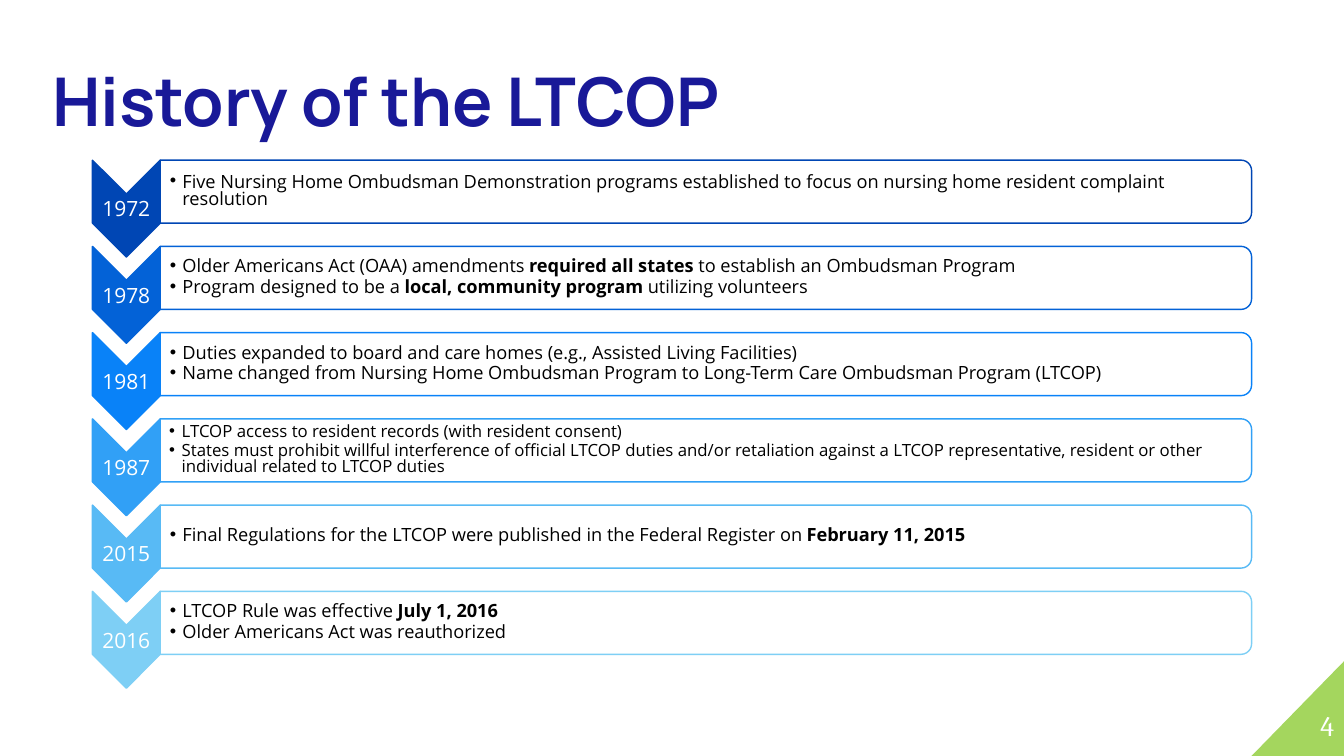
from lxml.etree import SubElement
from pptx import Presentation
from pptx.dml.color import RGBColor
from pptx.enum.shapes import MSO_SHAPE as Preset
from pptx.enum.text import MSO_ANCHOR as Anchor, MSO_AUTO_SIZE as AutoSize, PP_ALIGN as Align
from pptx.oxml.ns import qn
from pptx.util import Pt

COLORS = {
    "white": "FFFFFF", "black": "000000", "title": "191998", "corner": "A4D65E",
    "1972": "0046B4", "1978": "0362D7", "1981": "0982F8",
    "1987": "31A0F6", "2015": "58BAF5", "2016": "7ECFF5",
}
SLIDE_WIDTH, SLIDE_HEIGHT = 960, 540

# year, text size, bullets; every second run of a bullet is bold
MILESTONES = [
    ("1972", 13, [["Five Nursing Home Ombudsman Demonstration programs established to focus on "
                   "nursing home resident complaint resolution"]]),
    ("1978", 13, [["Older Americans Act (OAA) amendments ", "required all states ",
                   "to establish an Ombudsman Program"],
                  ["Program designed to be a ", "local, community program ",
                   "utilizing volunteers"]]),
    ("1981", 13, [["Duties expanded to board and care homes (e.g., Assisted Living Facilities)"],
                  ["Name changed from Nursing Home Ombudsman Program to Long-Term Care "
                   "Ombudsman Program (LTCOP)"]]),
    ("1987", 12, [["LTCOP access to resident records (with resident consent)"],
                  ["States must prohibit willful interference of official LTCOP duties and/or "
                   "retaliation against a LTCOP representative, resident or other individual "
                   "related to LTCOP duties"]]),
    ("2015", 13, [["Final Regulations for the LTCOP were published in the Federal Register on ",
                   "February 11, 2015"]]),
    ("2016", 13, [["LTCOP Rule was effective ", "July 1, 2016"],
                  ["Older Americans Act was reauthorized"]]),
]


def color(name):
    return RGBColor.from_string(COLORS[name])


def add_run(paragraph, text, size, font_name, color_name, bold=False):
    run = paragraph.add_run()
    run.text = text
    run.font.size = Pt(size)
    run.font.name = font_name
    run.font.bold = bold
    run.font.color.rgb = color(color_name)


def add_preset(slide, preset, left, top, width, height, fill, line=None):
    shape = slide.shapes.add_shape(preset, Pt(left), Pt(top), Pt(width), Pt(height))
    shape.shadow.inherit = False
    shape.fill.solid()
    shape.fill.fore_color.rgb = color(fill)
    if line:
        shape.line.color.rgb = color(line)
        shape.line.width = Pt(1)
    else:
        shape.line.fill.background()
    return shape


def add_turned(slide, preset, left, top, width, height, fill, line):
    """Add a shape turned by 90 degrees that covers the given box once turned."""
    shift = (width - height) / 2
    shape = add_preset(slide, preset, left + shift, top - shift, height, width, fill, line)
    shape.rotation = 90


def add_text_frame(slide, left, top, width, height, left_inset=0.75, inset=0.75):
    text_box = slide.shapes.add_textbox(Pt(left), Pt(top), Pt(width), Pt(height))
    frame = text_box.text_frame
    frame.word_wrap = True
    frame.vertical_anchor = Anchor.MIDDLE
    frame.margin_left = Pt(left_inset)
    frame.margin_top = frame.margin_right = frame.margin_bottom = Pt(inset)
    return frame


def make_bullet(paragraph, indent):
    properties = paragraph._p.get_or_add_pPr()
    properties.set("marL", str(Pt(indent)))
    properties.set("indent", str(-Pt(indent)))
    SubElement(properties, qn("a:buFont")).set("typeface", "Arial")
    SubElement(properties, qn("a:buChar")).set("char", "•")


def add_title(slide, left, top, width, height):
    title = slide.shapes.title
    title.left, title.top, title.width, title.height = Pt(left), Pt(top), Pt(width), Pt(height)
    frame = title.text_frame
    frame.auto_size = AutoSize.NONE
    frame.vertical_anchor = Anchor.MIDDLE
    paragraph = frame.paragraphs[0]
    paragraph.alignment = Align.LEFT
    paragraph.line_spacing = 0.9
    add_run(paragraph, "History of the LTCOP", 48, "Manrope", "title", bold=True)


def add_milestone(slide, left, top, width, height, year, size, bullets):
    """Add a year chevron, which hangs below the row, and its panel of bullets."""
    chevron_width, chevron_height = 48.4, 69.2
    add_turned(slide, Preset.CHEVRON, left, top, chevron_width, chevron_height, year, year)
    label = add_text_frame(slide, left, top, chevron_width, chevron_height).paragraphs[0]
    label.alignment = Align.CENTER
    add_run(label, year, 15, "Open Sans", "white")

    panel = (left + chevron_width, top, width - chevron_width, height)
    add_turned(slide, Preset.ROUND_2_SAME_RECTANGLE, *panel, "white", year)
    frame = add_text_frame(slide, *panel, left_inset=size * 0.53)
    for index, runs in enumerate(bullets):
        paragraph = frame.add_paragraph() if index else frame.paragraphs[0]
        make_bullet(paragraph, 9)
        paragraph.line_spacing = 0.8
        paragraph.space_after = Pt(2)
        for position, text in enumerate(runs):
            add_run(paragraph, text, size, "Open Sans", "black", bold=position % 2 == 1)


def add_timeline(slide, left, top, width, pitch):
    for row, milestone in enumerate(MILESTONES):
        add_milestone(slide, left, top + row * pitch, width, 45, *milestone)


def add_page_corner(slide, width, height):
    left, top = SLIDE_WIDTH - width, SLIDE_HEIGHT - height
    triangle = add_preset(slide, Preset.RIGHT_TRIANGLE, left, top, width, height, "corner")
    triangle._element.spPr.find(qn("a:xfrm")).set("flipH", "1")
    number_size = 40
    frame = add_text_frame(slide, SLIDE_WIDTH - number_size, SLIDE_HEIGHT - number_size - 2,
                           number_size, number_size, left_inset=7.2, inset=7.2)
    paragraph = frame.paragraphs[0]
    paragraph.alignment = Align.RIGHT
    add_run(paragraph, "4", 20, "Cambria", "white")


def main():
    presentation = Presentation()
    presentation.slide_width, presentation.slide_height = Pt(SLIDE_WIDTH), Pt(SLIDE_HEIGHT)
    slide = presentation.slides.add_slide(presentation.slide_layouts[5])
    add_page_corner(slide, 66, 67.6)
    add_title(slide, 30, 36, 864, 78)
    add_timeline(slide, 66, 114.4, 828, 61.6)
    presentation.save("out.pptx")


if __name__ == "__main__":
    main()
